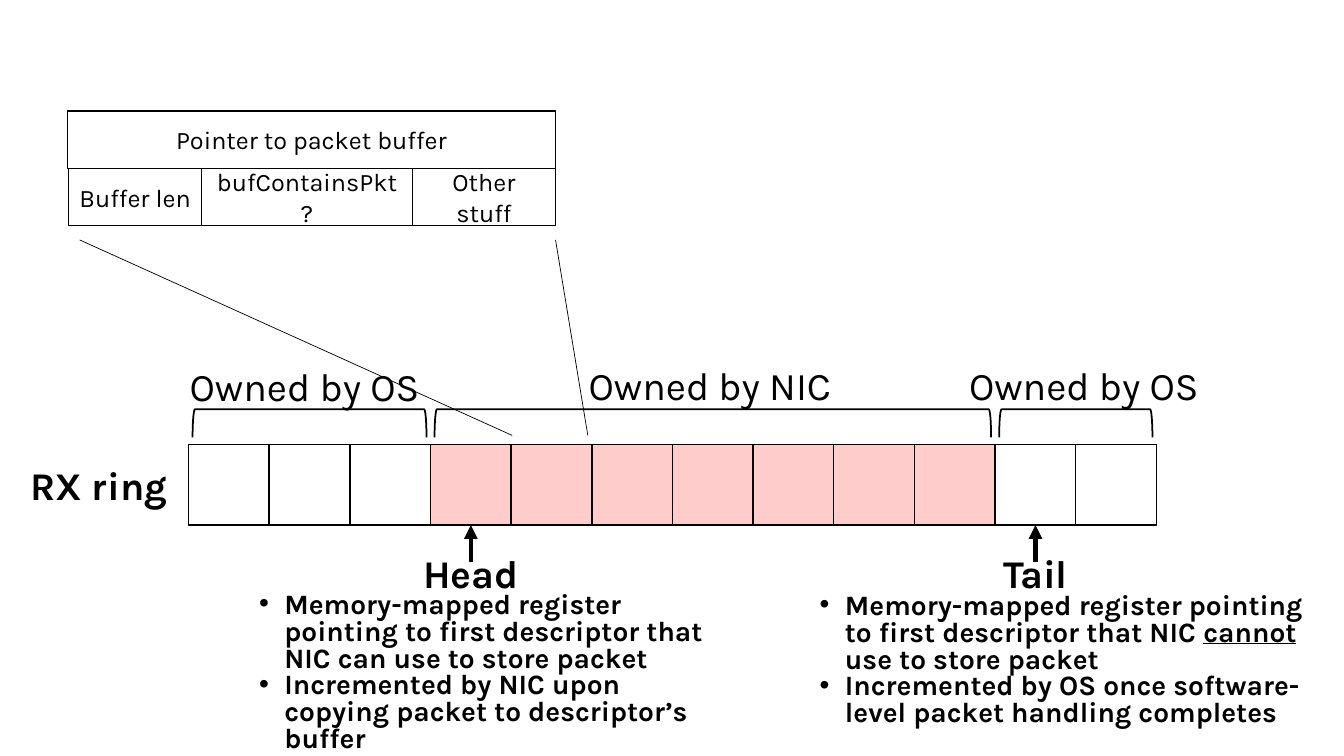
from dataclasses import dataclass

from lxml import etree
from pptx import Presentation
from pptx import util as u
from pptx.dml.color import RGBColor
from pptx.enum import shapes, text
from pptx.oxml.ns import qn

Inches = u.Inches


@dataclass(frozen=True)
class Theme:
    font: str = "Karla"
    ink: RGBColor = RGBColor(0x00, 0x00, 0x00)
    paper: RGBColor = RGBColor(0xFF, 0xFF, 0xFF)
    nic: RGBColor = RGBColor(0xFF, 0xCC, 0xCC)
    label: int = 28
    list: int = 20
    field: int = 18


THEME = Theme()

# Ring geometry: equal cells in a single row
RING_LEFT, RING_TOP, CELL = 1.87, 4.41, 0.8
# Owner, cell count, fill, label centre, label top
OWNERS = [
    ("Owned by OS", 3, THEME.paper, 3.02, 3.55),
    ("Owned by NIC", 7, THEME.nic, 7.04, 3.54),
    ("Owned by OS", 2, THEME.paper, 10.75, 3.54),
]
# Descriptor fields: text, left, top, width
FIELDS = [
    ("Pointer to packet buffer", 0.67, 1.1, 4.84),
    ("Buffer len", 0.68, 1.67, 1.32),
    ("bufContainsPkt?", 2, 1.67, 2.09),
    ("Other stuff", 4.09, 1.67, 1.42),
]
# Registers: name, cell index
REGISTERS = [("Head", 3), ("Tail", 10)]
HEAD_NOTES = [
    ["Memory-mapped register pointing to first descriptor that NIC can use to store packet"],
    ["Incremented by NIC upon copying packet to descriptor’s buffer"],
]
TAIL_NOTES = [
    ["Memory-mapped register pointing to first descriptor that NIC ", "cannot",
     " use to store packet"],
    ["Incremented by OS once software-level packet handling completes"],
]


def frame(left, top, width, height):
    return [Inches(round(value, 2)) for value in (left, top, width, height)]


def style_span(span, size, bold=False):
    span.font.name = THEME.font
    span.font.size = u.Pt(size)
    span.font.bold = bold
    span.font.color.rgb = THEME.ink


def centre_text(box, words, size, bold=False):
    box.text_frame.word_wrap = True
    para = box.text_frame.paragraphs[0]
    para.text = words
    para.alignment = text.PP_ALIGN.CENTER
    style_span(para.runs[0], size, bold)


def add_box(page, place, fill, words=""):
    box = page.shapes.add_shape(shapes.MSO_SHAPE.RECTANGLE, *frame(*place))
    box.shadow.inherit = False
    box.fill.solid()
    box.fill.fore_color.rgb = fill
    box.line.color.rgb = THEME.ink
    box.line.width = u.Pt(1)
    if words:
        box.text_frame.vertical_anchor = text.MSO_ANCHOR.MIDDLE
        centre_text(box, words, THEME.field)


def add_label(page, words, centre, top, width, bold=False):
    box = page.shapes.add_textbox(*frame(centre - width / 2, top, width, 0.57))
    centre_text(box, words, THEME.label, bold)


def add_bracket(page, centre, length):
    # The frame is upright before its quarter turn
    depth, middle = 0.28, 4.2
    place = frame(centre - depth / 2, middle - length / 2, depth, length)
    bracket = page.shapes.add_shape(shapes.MSO_SHAPE.LEFT_BRACKET, *place)
    bracket.rotation = 90
    bracket.shadow.inherit = False
    bracket.fill.background()
    bracket.line.color.rgb = THEME.ink
    bracket.line.width = u.Pt(1.25)


def add_line(page, start, end, width, arrow=False):
    points = [Inches(value) for value in (*start, *end)]
    line = page.shapes.add_connector(shapes.MSO_CONNECTOR.STRAIGHT, *points)
    line.line.color.rgb = THEME.ink
    line.line.width = u.Pt(width)
    if arrow:
        etree.SubElement(line.line._get_or_add_ln(), qn("a:tailEnd"), type="triangle")
    etree.SubElement(line._element.spPr, qn("a:effectLst"))


def fill_list(body, place, items):
    body.left, body.top, body.width, body.height = frame(*place)
    words = body.text_frame
    words.word_wrap = True
    words.auto_size = text.MSO_AUTO_SIZE.NONE
    words.vertical_anchor = text.MSO_ANCHOR.TOP
    for index, item in enumerate(items):
        para = words.add_paragraph() if index else words.paragraphs[0]
        para.line_spacing = 0.8
        para.space_before = u.Pt(0)
        layout = para._p.get_or_add_pPr()
        layout.set("marL", str(Inches(0.25)))
        layout.set("indent", str(Inches(-0.25)))
        etree.SubElement(layout, qn("a:buFont"), typeface="Arial")
        etree.SubElement(layout, qn("a:buChar"), char="•")
        for part in item:
            span = para.add_run()
            span.text = part
            style_span(span, THEME.list, bold=True)
            span.font.underline = part == "cannot"


def add_ring(page):
    left = RING_LEFT
    for owner, count, fill, label_centre, label_top in OWNERS:
        for index in range(count):
            add_box(page, (left + index * CELL, RING_TOP, CELL, CELL), fill)
        length = count * CELL
        add_bracket(page, left + length / 2, length - 0.08)
        add_label(page, owner, label_centre, label_top, 3)
        left += length
    add_label(page, "RX ring", 0.98, 4.53, 1.76, bold=True)


def add_register(page, name, cell):
    centre = RING_LEFT + (cell + 0.5) * CELL
    add_label(page, name, centre, 5.4, 1.34, bold=True)
    add_line(page, (centre, 5.58), (centre, RING_TOP + CELL), 3.25, arrow=True)


def main():
    deck = Presentation()
    deck.slide_width, deck.slide_height = Inches(13.33), Inches(7.5)
    page = deck.slides.add_slide(deck.slide_layouts.get_by_name("Two Content"))
    title, head_body, tail_body = list(page.placeholders)[:3]
    title._element.getparent().remove(title._element)

    # Ring with its owners and registers
    add_ring(page)
    for name, cell in REGISTERS:
        add_register(page, name, cell)

    # Register notes
    fill_list(head_body, (2.47, 5.83, 4.65, 1.59), HEAD_NOTES)
    fill_list(tail_body, (8.03, 5.84, 5.07, 1.59), TAIL_NOTES)

    # Enlarged descriptor
    add_line(page, (5.08, 4.32), (0.79, 2.38), 0.5)
    add_line(page, (5.83, 4.32), (5.51, 2.38), 0.5)
    for words, left, top, width in FIELDS:
        add_box(page, (left, top, width, 0.57), THEME.paper, words)

    deck.save("out.pptx")


if __name__ == "__main__":
    main()
